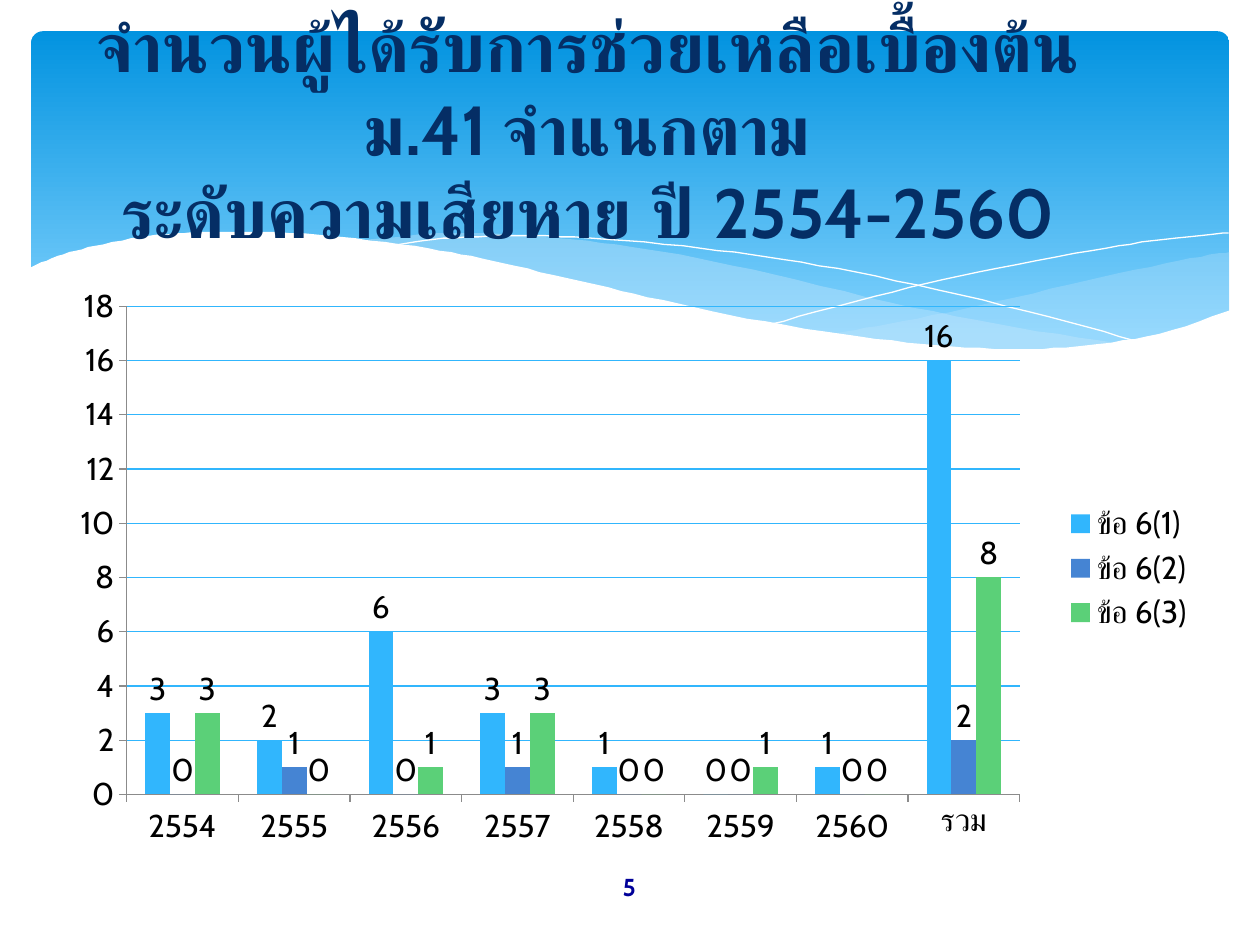
"""Build a slide with a wave banner, a title and a clustered column chart."""
from lxml import etree
from pptx import Presentation
from pptx.chart.data import CategoryChartData
from pptx.dml.color import RGBColor
from pptx.enum.chart import XL_CHART_TYPE as ChartType, XL_LABEL_POSITION as LabelPosition
from pptx.enum.chart import XL_LEGEND_POSITION as LegendPosition, XL_TICK_MARK as TickMark
from pptx.enum.shapes import MSO_SHAPE as Preset
from pptx.enum.text import MSO_ANCHOR as Anchor, PP_ALIGN as Align
from pptx.oxml import parse_xml
from pptx.oxml.ns import nsdecls, qn
from pptx.util import Cm, Pt

FONT = "Cabin"
WAVE_UNIT = Cm(0.0254)
CATEGORIES = ["2554", "2555", "2556", "2557", "2558", "2559", "2560", "รวม"]
SERIES = [
    ("ข้อ 6(1)", "31B6FD", [3, 2, 6, 3, 1, 0, 1, 16]),
    ("ข้อ 6(2)", "4584D3", [0, 1, 0, 1, 0, 0, 0, 2]),
    ("ข้อ 6(3)", "5BD078", [3, 0, 1, 3, 0, 1, 0, 8]),
]
PLOT_LAYOUT = {"x": 0.073, "y": 0.05, "w": 0.766, "h": 0.839}
RIGHT_WAVE = [
    [(976, 200), (935, 207), (861, 223), (779, 242), (706, 257), (661, 265)],
    [(661, 265), (705, 271), (757, 276), (814, 278), (872, 274), (921, 265), (976, 247)],
]
LONG_WAVE = [
    [(893, 273), (807, 260), (706, 240), (598, 214), (514, 198), (442, 189),
     (361, 185), (286, 191)],
    [(286, 191), (362, 203), (449, 222), (566, 248), (650, 264), (736, 275),
     (818, 278), (893, 273)],
]
FALLING_LINE = [[(309, 195), (344, 190), (401, 187), (469, 189), (556, 197), (636, 208),
                 (727, 226), (831, 251), (907, 272)]]
RISING_LINE = [[(613, 257), (695, 235), (776, 216), (866, 199), (924, 190), (975, 185)]]
WHITE_WAVE = [
    [(977, 246), (920, 265), (863, 274), (809, 277), (744, 274), (668, 265), (579, 250),
     (503, 233), (447, 220), (391, 207), (340, 197), (271, 188), (211, 184), (161, 184),
     (119, 187), (76, 195), (46, 203), (23, 213)],
    [(23, 329), (977, 329)],
]


def color(hex_string):
    """Turn a hex string into a colour."""
    return RGBColor.from_string(hex_string)


def apply_format(target, values):
    """Set each named attribute on the target."""
    for name, value in values.items():
        setattr(target, name, value)


def set_font(font, size, hex_string, bold=False):
    """Give a font its face, size, weight and colour."""
    apply_format(font, {"name": FONT, "size": Pt(size), "bold": bold})
    font.color.rgb = color(hex_string)


def smooth_edge(points, steps=6):
    """Return points along a Catmull-Rom curve through the given points."""
    padded = [points[0], *points, points[-1]]
    curve = [points[0]]
    for a, b, c, d in zip(padded, padded[1:], padded[2:], padded[3:]):
        for step in range(1, steps + 1):
            t = step / steps
            curve.append(tuple(
                (2 * q + (r - p) * t + (2 * p - 5 * q + 4 * r - s) * t ** 2
                 + (3 * q - p - 3 * r + s) * t ** 3) / 2
                for p, q, r, s in zip(a, b, c, d)))
    return curve


def add_wave(slide, edges, fill=None, opacity=100, line=None):
    """Draw smooth edges as a filled area or as an open line."""
    points = [point for edge in edges
              for point in (smooth_edge(edge) if len(edge) > 2 else edge)]
    builder = slide.shapes.build_freeform(*points[0], scale=WAVE_UNIT)
    builder.add_line_segments(points[1:], close=fill is not None)
    shape = builder.convert_to_shape()
    shape.shadow.inherit = False
    if fill:
        shape.fill.solid()
        shape.fill.fore_color.rgb = color(fill)
        shape.line.fill.background()
        tone = shape.fill._xPr.find(qn("a:solidFill"))[0]
        etree.SubElement(tone, qn("a:alpha"), val=str(opacity * 1000))
    else:
        shape.fill.background()
        shape.line.color.rgb = color(line)
        shape.line.width = Pt(0)


def add_banner(slide):
    """Draw the rounded gradient banner."""
    shape = slide.shapes.add_shape(
        Preset.ROUNDED_RECTANGLE, Cm(0.63), Cm(0.63), Cm(24.15), Cm(6.86))
    shape.adjustments[0] = 0.034
    shape.shadow.inherit = False
    shape.line.fill.background()
    shape.fill.gradient()
    shape.fill.gradient_angle = 270
    stops = [(0, "0293E0"), (0.9, "83D3FE")]
    for stop, (position, hex_string) in zip(shape.fill.gradient_stops, stops):
        stop.position = position
        stop.color.rgb = color(hex_string)


def add_text(slide, box, text, size, hex_string):
    """Add a centred bold text box."""
    frame = slide.shapes.add_textbox(*map(Cm, box)).text_frame
    apply_format(frame, {"word_wrap": True, "vertical_anchor": Anchor.MIDDLE})
    paragraph = frame.paragraphs[0]
    apply_format(paragraph, {"text": text, "alignment": Align.CENTER})
    for run in paragraph.runs:
        set_font(run.font, size, hex_string, bold=True)


def format_axes(chart):
    """Style both axes and the gridlines."""
    apply_format(chart.value_axis,
                 {"minimum_scale": 0, "maximum_scale": 18, "major_unit": 2,
                  "has_major_gridlines": True})
    for axis in (chart.category_axis, chart.value_axis):
        apply_format(axis, {"major_tick_mark": TickMark.OUTSIDE,
                            "minor_tick_mark": TickMark.NONE})
        axis.format.line.color.rgb = color("8B8B8B")
        axis.format.line.width = Pt(0.75)
    grid_line = chart.value_axis.major_gridlines.format.line
    grid_line.color.rgb = color("31B6FD")
    grid_line.width = Pt(0.75)


def set_plot_layout(chart):
    """Fix the inner plot area within the chart."""
    plot_area = chart._chartSpace.chart.plotArea
    for layout in plot_area.findall(qn("c:layout")):
        plot_area.remove(layout)
    modes = '<c:layoutTarget val="inner"/><c:xMode val="edge"/><c:yMode val="edge"/>'
    sizes = "".join(f'<c:{key} val="{value}"/>' for key, value in PLOT_LAYOUT.items())
    plot_area.insert(0, parse_xml(
        f'<c:layout {nsdecls("c")}><c:manualLayout>{modes}{sizes}</c:manualLayout></c:layout>'))


def add_column_chart(slide):
    """Add the clustered columns with value labels and a legend."""
    data = CategoryChartData()
    data.categories = CATEGORIES
    for name, _, values in SERIES:
        data.add_series(name, values)
    chart = slide.shapes.add_chart(
        ChartType.COLUMN_CLUSTERED, Cm(0.84), Cm(5.59), Cm(23.5), Cm(11.73), data).chart
    apply_format(chart, {"has_title": False, "has_legend": True})
    apply_format(chart.legend, {"position": LegendPosition.RIGHT, "include_in_layout": False})
    set_font(chart.font, 18, "000000")
    plot = chart.plots[0]
    apply_format(plot, {"gap_width": 150, "overlap": 0, "vary_by_categories": False,
                        "has_data_labels": True})
    apply_format(plot.data_labels, {"show_value": True, "position": LabelPosition.OUTSIDE_END})
    for series, (_, hex_string, _) in zip(plot.series, SERIES):
        series.format.fill.solid()
        series.format.fill.fore_color.rgb = color(hex_string)
    format_axes(chart)
    set_plot_layout(chart)


def main():
    """Build and save the slide."""
    presentation = Presentation()
    apply_format(presentation, {"slide_width": Cm(25.4), "slide_height": Cm(19.05)})
    slide = presentation.slides.add_slide(presentation.slide_layouts[6])
    add_banner(slide)
    add_wave(slide, RIGHT_WAVE, fill="C6E7FC", opacity=29)
    add_wave(slide, LONG_WAVE, fill="C6E7FC", opacity=40)
    for edges in (FALLING_LINE, RISING_LINE):
        add_wave(slide, edges, line="FFFFFF")
    add_wave(slide, WHITE_WAVE, fill="FFFFFF")
    title = "จำนวนผู้ได้รับการช่วยเหลือเบื้องต้น ม.41 จำแนกตาม\vระดับความเสียหาย ปี 2554-2560"
    add_text(slide, (1.27, 1.47, 21.16, 2.21), title, 39.6, "052E65")
    add_text(slide, (11.07, 17.37, 3.23, 1.02), "5", 14, "000099")
    add_column_chart(slide)
    presentation.save("out.pptx")


if __name__ == "__main__":
    main()
